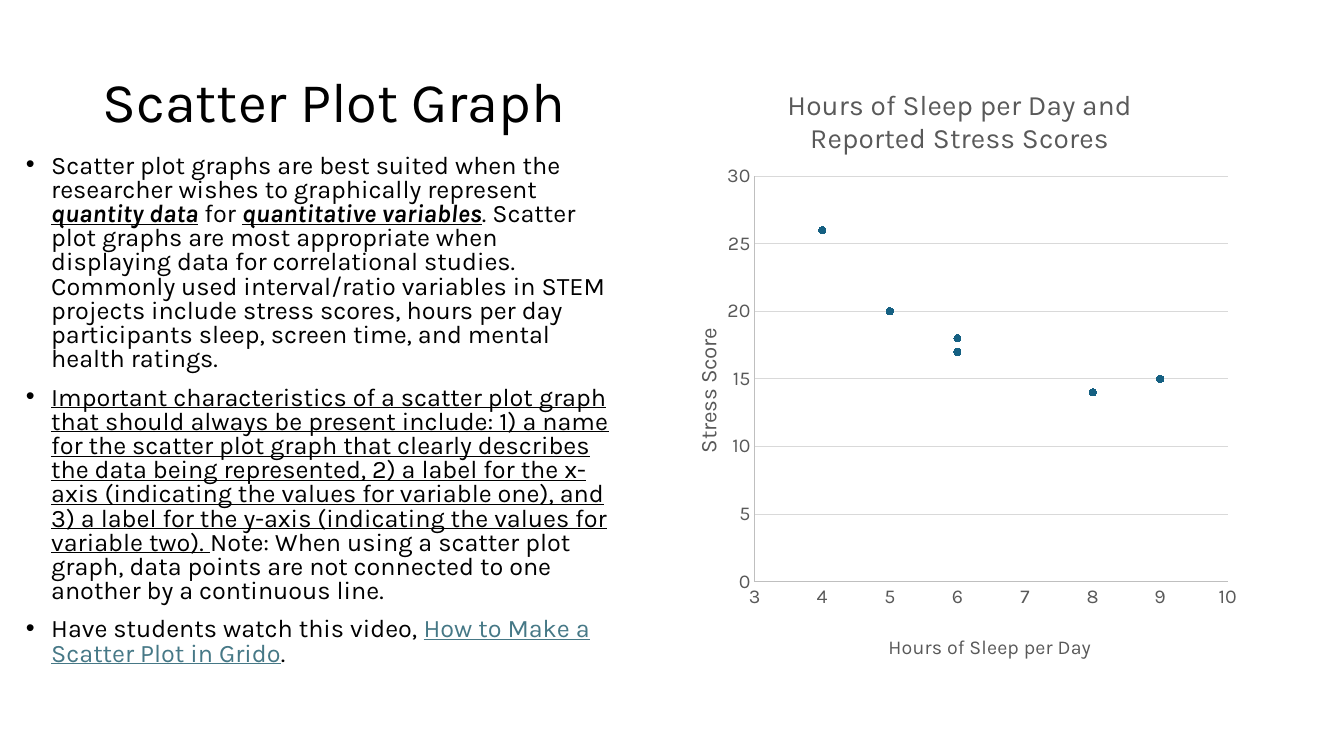
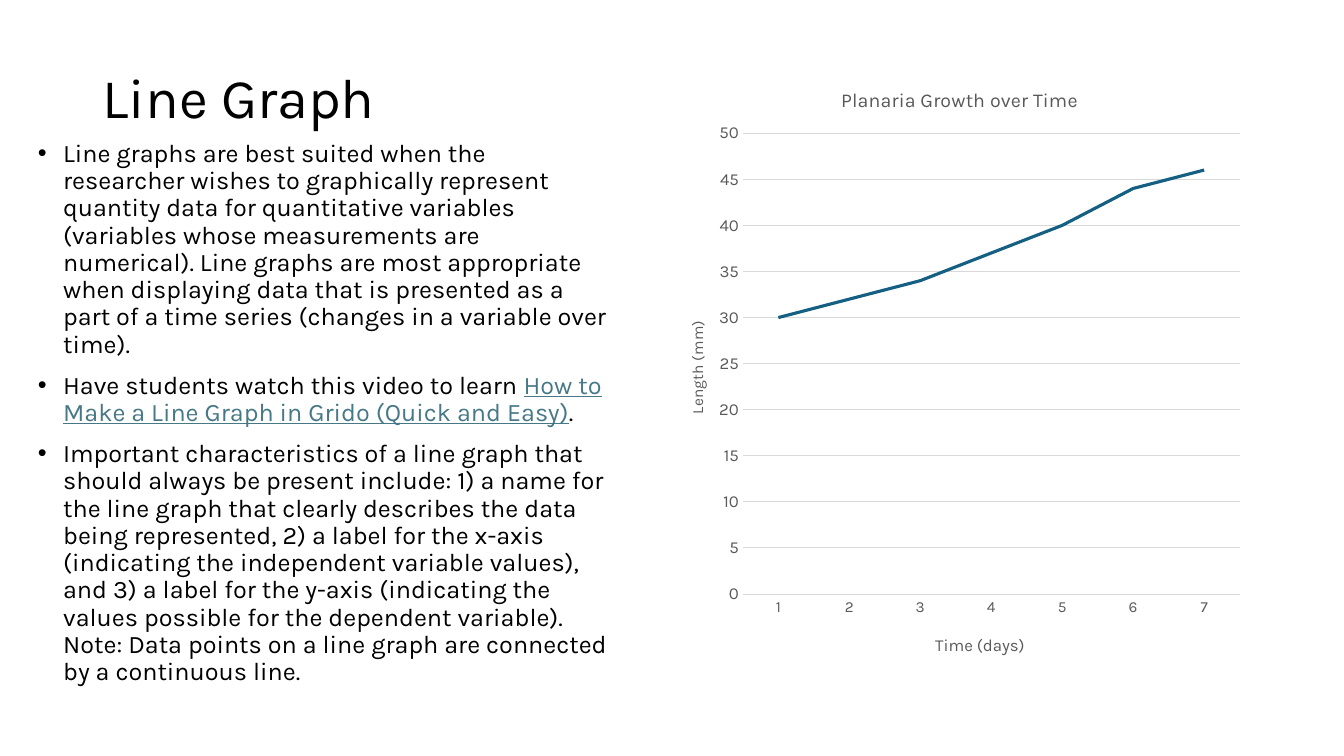
"""Build two slides that explain scatter plots and line graphs."""
from pptx import Presentation, util as u
from pptx.chart import data as chart_data
from pptx.dml import color
from pptx.enum import chart as ch, text
from pptx.oxml import parse_xml
from pptx.oxml.ns import nsdecls, qn

Pt = u.Pt
FONT = "Karla"
BLACK, LINK, GREY, BLUE = "000000", "467886", "595959", "156082"
AXIS_GREY, GRID_GREY = "BFBFBF", "D9D9D9"


def style(font, size, hue, marks=""):
    font.name, font.size = FONT, Pt(size)
    font.color.rgb = color.RGBColor.from_string(hue)
    font.bold, font.italic, font.underline = "b" in marks, "i" in marks, "u" in marks


def place(element, index, x, y, w=None, h=None):
    for old in element.findall(qn("c:layout")):
        element.remove(old)
    target = '<c:layoutTarget val="inner"/>' if w else ""
    modes = '<c:xMode val="edge"/><c:yMode val="edge"/>'
    extent = f'<c:w val="{w}"/><c:h val="{h}"/>' if w else ""
    element.insert(index, parse_xml(
        f'<c:layout {nsdecls("c")}><c:manualLayout>{target}{modes}'
        f'<c:x val="{x}"/><c:y val="{y}"/>{extent}</c:manualLayout></c:layout>'))


scatter_data = chart_data.XyChartData()
points = scatter_data.add_series("Series 1")
for hours, stress in zip([6, 5, 8, 6, 9, 4, 5], [18, 20, 14, 17, 15, 26, 20]):
    points.add_data_point(hours, stress)

growth_data = chart_data.CategoryChartData()
growth_data.categories = [str(day) for day in range(1, 8)]
growth_data.add_series("Series 1", [30, 32, 34, 37, 40, 44, 46])

topics = [
    {
        "heading": "Scatter Plot Graph",
        "heading_height": 57,
        "body_box": (11.5, 107, 431.5, 375),
        "spacing": 0.8,
        "bullets": [
            [("Scatter plot graphs are best suited when the researcher wishes to "
              "graphically represent ", ""),
             ("quantity data", "biu"), (" for ", ""), ("quantitative variables", "biu"),
             (". Scatter plot graphs are most appropriate when displaying data for "
              "correlational studies. Commonly used interval/ratio variables in STEM "
              "projects include stress scores, hours per day participants sleep, "
              "screen time, and mental health ratings.", "")],
            [("Important characteristics of a scatter plot graph that should always be "
              "present include: 1) a name for the scatter plot graph that clearly "
              "describes the data being represented, 2) a label for the x-axis "
              "(indicating the values for variable one), and 3) a label for the y-axis "
              "(indicating the values for variable two). ", "u"),
             ("Note: When using a scatter plot graph, data points are not connected to "
              "one another by a continuous line.", "")],
            [("Have students watch this video, ", ""),
             ("How to Make a Scatter Plot in Grido", "link"), (".", "")],
        ],
        "kind": ch.XL_CHART_TYPE.XY_SCATTER,
        "data": scatter_data,
        "plot": (0.16, 0.19, 0.8, 0.66),
        "titles": [(["Hours of Sleep per Day and", "Reported Stress Scores"], 20, 0.21, 0.04),
                   (["Hours of Sleep per Day"], 14, 0.38, 0.93),
                   (["Stress Score"], 16, 0.05, 0.43)],
        "label_sizes": (14, 14),
        "axis_lines": (AXIS_GREY, AXIS_GREY),
        "top_value": 30,
    },
    {
        "heading": "Line Graph",
        "heading_height": 54.5,
        "body_box": (20, 97, 423, 385),
        "spacing": 0.9,
        "bullets": [
            [("Line graphs are best suited when the researcher wishes to graphically "
              "represent quantity data for quantitative variables (variables whose "
              "measurements are numerical). Line graphs are most appropriate when "
              "displaying data that is presented as a part of a time series (changes "
              "in a variable over time).", "")],
            [("Have students watch this video to learn ", ""),
             ("How to Make a Line Graph in Grido (Quick and Easy)", "link"), (".", "")],
            [("Important characteristics of a line graph that should always be present "
              "include: 1) a name for the line graph that clearly describes the data "
              "being represented, 2) a label for the x-axis (indicating the independent "
              "variable values), and 3) a label for the y-axis (indicating the values "
              "possible for the dependent variable). Note: Data points on a line graph "
              "are connected by a continuous line.", "")],
        ],
        "kind": ch.XL_CHART_TYPE.LINE,
        "data": growth_data,
        "plot": (0.14, 0.12, 0.84, 0.75),
        "titles": [(["Planaria Growth over Time"], 14, 0.3, 0.04),
                   (["Time (days)"], 12, 0.46, 0.93),
                   (["Length (mm)"], 11, 0.04, 0.42)],
        "label_sizes": (11, 12),
        "axis_lines": (GRID_GREY, None),
        "top_value": 50,
    },
]

deck = Presentation()
deck.slide_width, deck.slide_height = Pt(960), Pt(540)

for topic in topics:
    slide = deck.slides.add_slide(deck.slide_layouts[5])
    heading = slide.shapes.title
    heading.left, heading.top = Pt(66), Pt(42.5)
    heading.width, heading.height = Pt(376.5), Pt(topic["heading_height"])
    frame = heading.text_frame
    frame.vertical_anchor = text.MSO_ANCHOR.BOTTOM
    frame.auto_size = text.MSO_AUTO_SIZE.NONE
    frame.word_wrap = True
    paragraph = frame.paragraphs[0]
    paragraph.alignment = text.PP_ALIGN.LEFT
    paragraph.line_spacing = 0.9
    run = paragraph.add_run()
    run.text = topic["heading"]
    style(run.font, 40, BLACK)

    body = slide.shapes.add_textbox(*[Pt(n) for n in topic["body_box"]]).text_frame
    body.word_wrap = True
    for number, bullet in enumerate(topic["bullets"]):
        paragraph = body.add_paragraph() if number else body.paragraphs[0]
        paragraph.line_spacing = topic["spacing"]
        paragraph.space_before = Pt(10)
        properties = paragraph._p.get_or_add_pPr()
        properties.set("marL", str(Pt(18)))
        properties.set("indent", str(-Pt(18)))
        properties.append(parse_xml(f'<a:buFont {nsdecls("a")} typeface="Arial"/>'))
        properties.append(parse_xml(f'<a:buChar {nsdecls("a")} char="•"/>'))
        for words, marks in bullet:
            run = paragraph.add_run()
            run.text = words
            if marks == "link":
                style(run.font, 18, LINK, "u")
            else:
                style(run.font, 18, BLACK, marks)

    chart = slide.shapes.add_chart(topic["kind"], Pt(471.5), Pt(42.5), Pt(422.5), Pt(439),
                                   topic["data"]).chart
    style(chart.font, 10, BLACK)
    chart.has_legend = False
    across, up = chart.category_axis, chart.value_axis
    for owner, (lines, size, x, y) in zip((chart, across, up), topic["titles"]):
        owner.has_title = True
        title = owner.chart_title if owner is chart else owner.axis_title
        frame = title.text_frame
        for number, line in enumerate(lines):
            paragraph = frame.add_paragraph() if number else frame.paragraphs[0]
            run = paragraph.add_run()
            run.text = line
            style(run.font, size, GREY)
        if owner is up:
            frame._txBody.find(qn("a:bodyPr")).set("rot", "-5400000")
        place(title._element, 1, x, y)
    place(chart._chartSpace.chart.plotArea, 0, *topic["plot"])

    for axis, size, hue in zip((across, up), topic["label_sizes"], topic["axis_lines"]):
        axis.major_tick_mark = axis.minor_tick_mark = ch.XL_TICK_MARK.NONE
        style(axis.tick_labels.font, size, GREY)
        if hue:
            axis.format.line.color.rgb = color.RGBColor.from_string(hue)
            axis.format.line.width = Pt(0.75)
        else:
            axis.format.line.fill.background()
    across.has_major_gridlines = False
    up.has_major_gridlines = True
    grid = up.major_gridlines.format.line
    grid.color.rgb = color.RGBColor.from_string(GRID_GREY)
    grid.width = Pt(0.75)
    up.minimum_scale, up.maximum_scale, up.major_unit = 0, topic["top_value"], 5

    plot = chart.plots[0]
    plot.vary_by_categories = False
    series = plot.series[0]
    if topic["kind"] == ch.XL_CHART_TYPE.XY_SCATTER:
        across.minimum_scale, across.maximum_scale, across.major_unit = 3, 10, 1
        series.format.line.fill.background()
        marker = series.marker
        marker.style, marker.size = ch.XL_MARKER_STYLE.CIRCLE, 5
        marker.format.fill.solid()
        marker.format.fill.fore_color.rgb = color.RGBColor.from_string(BLUE)
        marker.format.line.color.rgb = color.RGBColor.from_string(BLUE)
    else:
        series.smooth = False
        series.marker.style = ch.XL_MARKER_STYLE.NONE
        series.format.line.color.rgb = color.RGBColor.from_string(BLUE)
        series.format.line.width = Pt(2.25)

deck.save("out.pptx")
